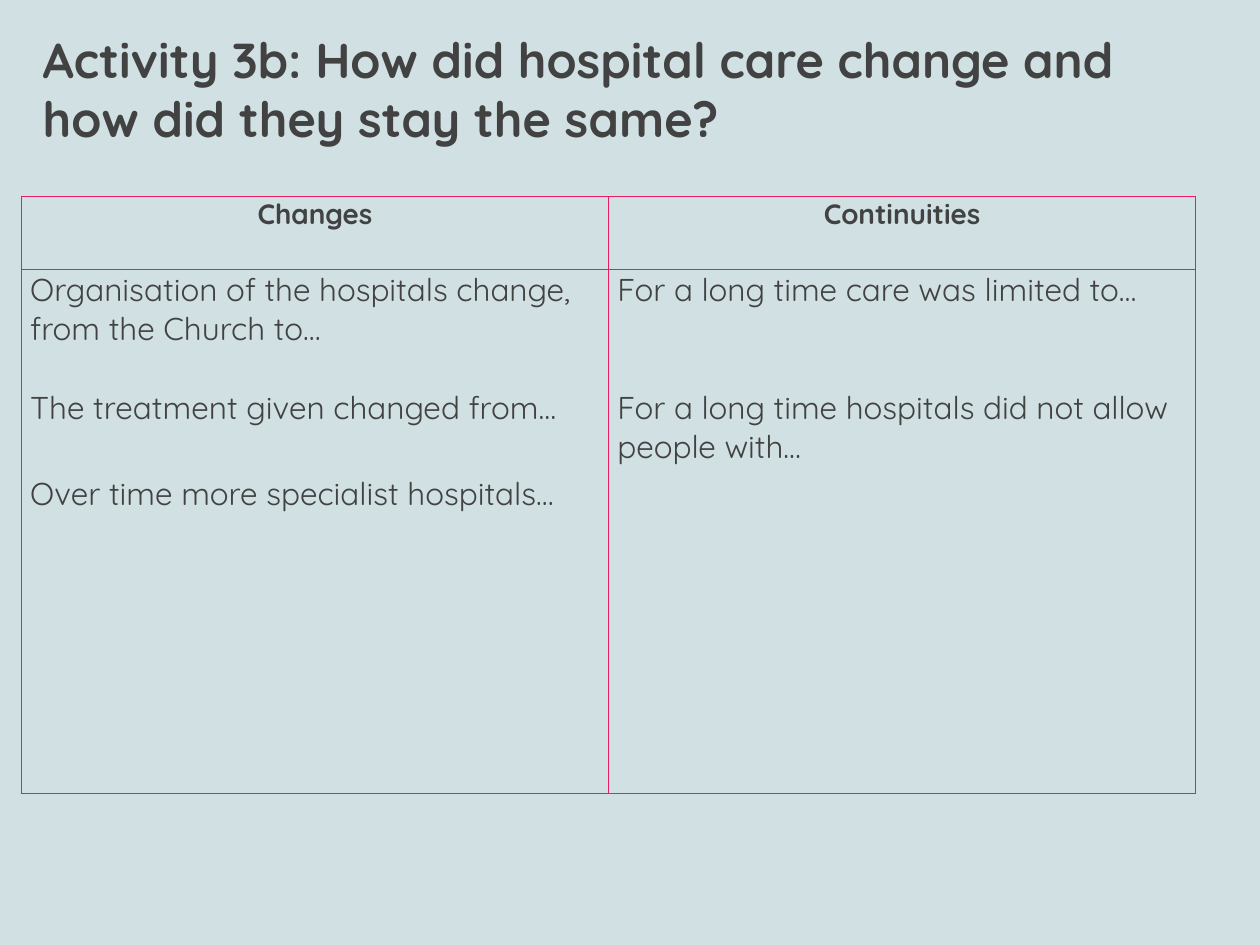
from dataclasses import dataclass

from lxml import etree
from pptx import Presentation
from pptx.dml.color import RGBColor
from pptx.enum.text import MSO_ANCHOR, PP_ALIGN
from pptx.oxml.ns import qn
from pptx.util import Inches, Pt

BOTTOM = MSO_ANCHOR.BOTTOM
TOP = MSO_ANCHOR.TOP
LEFT = PP_ALIGN.LEFT
CENTER = PP_ALIGN.CENTER
BLANK = 6


@dataclass(frozen=True)
class Theme:
    font: str = "Quicksand"
    back: str = "D0E0E3"
    ink: str = "424242"
    rule: str = "E91D63"
    title: int = 28
    head: int = 16
    body: int = 18


THEME = Theme()

TITLE = "Activity 3b: How did hospital care change and how did they stay the same?"
HEADS = ["Changes", "Continuities"]
# Each prompt is paired with the space before it, in points
PROMPTS = [
    [
        ("Organisation of the hospitals change, from the Church to…", 0),
        ("The treatment given changed from…", 22.5),
        ("Over time more specialist hospitals…", 26.5),
    ],
    [
        ("For a long time care was limited to…", 0),
        ("For a long time hospitals did not allow people with…", 45),
    ],
]


def style(para, size, bold=False, align=LEFT):
    para.alignment = align
    for run in para.runs:
        font = run.font
        font.name = THEME.font
        font.size = Pt(size)
        font.bold = bold
        font.color.rgb = RGBColor.from_string(THEME.ink)


def add_title(slide, left, top, width, height):
    box = slide.shapes.add_textbox(left, top, width, height)
    frame = box.text_frame
    frame.word_wrap = True
    frame.vertical_anchor = BOTTOM
    frame.margin_left = frame.margin_right = Inches(0.1)
    frame.margin_top = frame.margin_bottom = Inches(0.1)
    frame.text = TITLE
    style(frame.paragraphs[0], THEME.title, bold=True)


def set_cell(cell):
    cell.margin_left = cell.margin_right = Inches(0.07)
    cell.margin_top = cell.margin_bottom = 0
    cell.vertical_anchor = TOP
    # Borders come before the fill in the cell properties
    props = cell._tc.get_or_add_tcPr()
    for side in ("a:lnL", "a:lnR", "a:lnT", "a:lnB"):
        line = etree.SubElement(props, qn(side), w=str(Pt(1)))
        fill = etree.SubElement(line, qn("a:solidFill"))
        etree.SubElement(fill, qn("a:srgbClr"), val=THEME.rule)
    cell.fill.background()


def add_grid(slide, left, top, width, height):
    count = len(HEADS)
    table = slide.shapes.add_table(2, count, left, top, width, height).table
    table.first_row = table.horz_banding = False
    table.rows[0].height = Inches(0.58)
    table.rows[1].height = height - Inches(0.58)

    for col, (head, prompts) in enumerate(zip(HEADS, PROMPTS)):
        table.columns[col].width = width // count

        # Heading
        cell = table.cell(0, col)
        set_cell(cell)
        cell.text_frame.text = head
        style(cell.text_frame.paragraphs[0], THEME.head, True, CENTER)

        # Sentence starters
        cell = table.cell(1, col)
        set_cell(cell)
        frame = cell.text_frame
        frame.text = "\n".join(text for text, gap in prompts)
        for para, (text, gap) in zip(frame.paragraphs, prompts):
            para.space_before = Pt(gap)
            style(para, THEME.body)


def main():
    deck = Presentation()
    deck.slide_width = Inches(10)
    deck.slide_height = Inches(7.5)
    slide = deck.slides.add_slide(deck.slide_layouts[BLANK])
    slide.background.fill.solid()
    slide.background.fill.fore_color.rgb = RGBColor.from_string(THEME.back)

    add_title(slide, Inches(0.24), Inches(0.17), Inches(9.25), Inches(1.1))
    add_grid(slide, Inches(0.17), Inches(1.56), Inches(9.32), Inches(4.74))
    deck.save("out.pptx")


if __name__ == "__main__":
    main()
